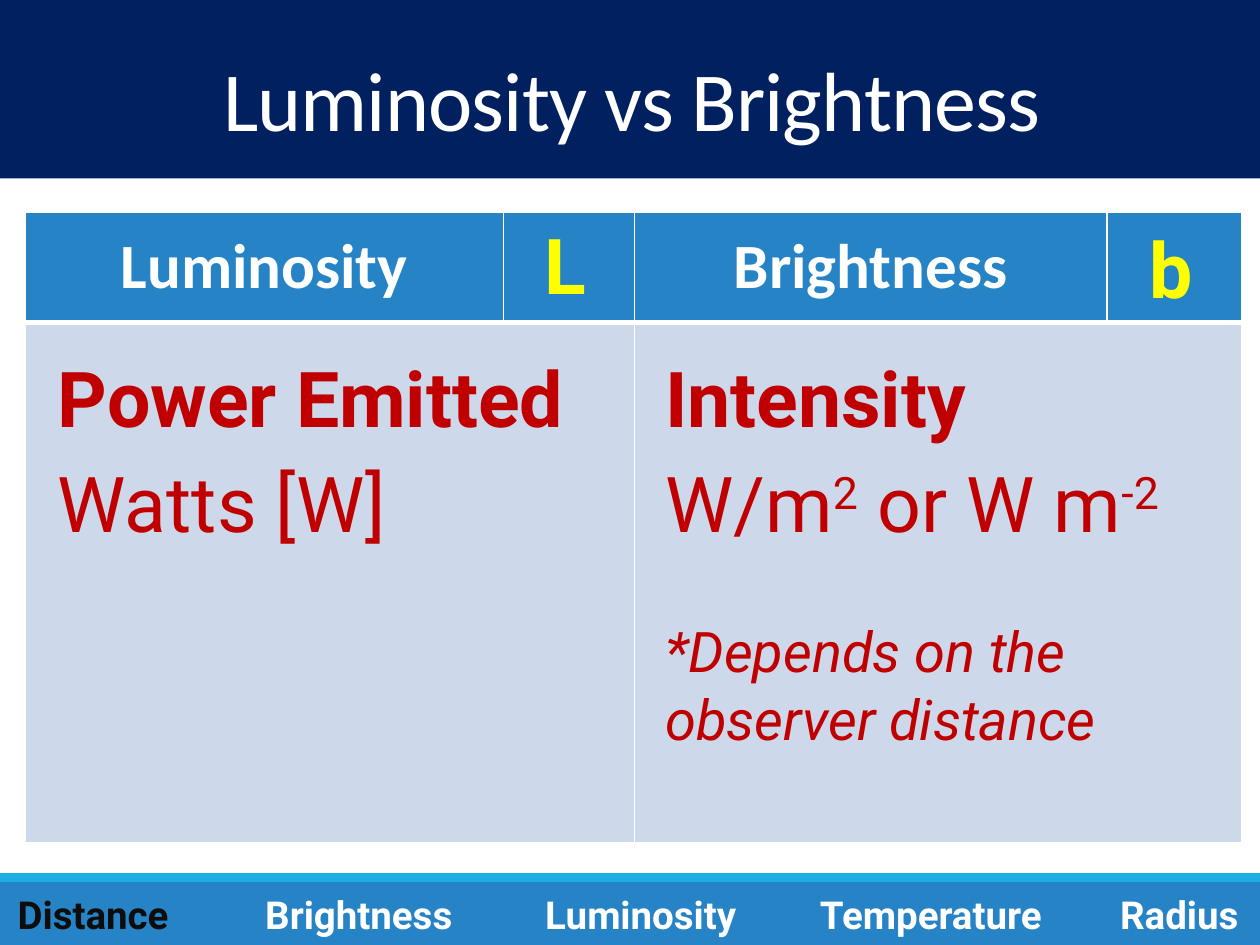
import pptx
import pptx.dml.color
import pptx.enum.shapes
import pptx.enum.text
import pptx.oxml
import pptx.oxml.ns
import pptx.util

Pt = pptx.util.Pt
RGBColor = pptx.dml.color.RGBColor
Align = pptx.enum.text.PP_ALIGN
Anchor = pptx.enum.text.MSO_ANCHOR
AutoSize = pptx.enum.text.MSO_AUTO_SIZE

WHITE = RGBColor(0xFF, 0xFF, 0xFF)
NAVY = RGBColor(0x00, 0x20, 0x60)
BLUE = RGBColor(0x26, 0x83, 0xC6)
SKY = RGBColor(0x1C, 0xAD, 0xE4)
PALE = RGBColor(0xCD, 0xD9, 0xEA)
RED = RGBColor(0xC0, 0x00, 0x00)
YELLOW = RGBColor(0xFF, 0xFF, 0x00)
BLACK = RGBColor(0x0D, 0x0D, 0x0D)


def add_run(paragraph, text, size=44, color=RED, font="Roboto", bold=False,
            italic=False, **attributes):
    """Add a run; extra keywords become run attributes such as spc or baseline."""
    run = paragraph.add_run()
    run.text = text
    run.font.size = Pt(size)
    run.font.name = font
    run.font.color.rgb = color
    run.font.bold = bold
    run.font.italic = italic
    for name, value in attributes.items():
        run.font._element.set(name, str(value))


def set_borders(cell, bottom=1):
    """Give a cell white borders, with widths in points."""
    properties = cell._tc.get_or_add_tcPr()
    for side, width in (("L", 1), ("R", 1), ("T", 1), ("B", bottom)):
        properties.append(pptx.oxml.parse_xml(
            f'<a:ln{side} {pptx.oxml.ns.nsdecls("a")} w="{Pt(width)}">'
            f'<a:solidFill><a:srgbClr val="{WHITE}"/></a:solidFill></a:ln{side}>'))


class SlideBuilder:
    def __init__(self, slide, heading_font="Calibri"):
        self.slide = slide
        self.heading_font = heading_font

    def band(self, top, height, color):
        shape = self.slide.shapes.add_shape(
            pptx.enum.shapes.MSO_SHAPE.RECTANGLE, 0, Pt(top), Pt(720), Pt(height))
        shape.shadow.inherit = False
        shape.fill.solid()
        shape.fill.fore_color.rgb = color
        shape.line.fill.background()

    def text_box(self, left, top, width, height, *pieces, align=Align.LEFT,
                 wrap=False, **style):
        """Add one paragraph; a piece is a text or a (text, baseline) pair."""
        shape = self.slide.shapes.add_textbox(Pt(left), Pt(top), Pt(width), Pt(height))
        frame = shape.text_frame
        frame.word_wrap = wrap
        frame.auto_size = AutoSize.SHAPE_TO_FIT_TEXT
        paragraph = frame.paragraphs[0]
        paragraph.alignment = align
        for piece in pieces:
            if isinstance(piece, tuple):
                add_run(paragraph, piece[0], baseline=piece[1], **style)
            else:
                add_run(paragraph, piece, **style)
        return frame

    def title(self, text):
        frame = self.text_box(2, 30, 718, 60.5, text, align=Align.CENTER, wrap=True,
                              size=48, color=WHITE, font=self.heading_font, spc=-50)
        frame.auto_size = AutoSize.NONE
        frame.vertical_anchor = Anchor.MIDDLE
        frame.paragraphs[0].line_spacing = 0.85

    def comparison_table(self, left, top, widths, heights, headings):
        """Each heading takes a wide and a narrow column, joined in the body row."""
        table = self.slide.shapes.add_table(
            len(heights), len(widths), Pt(left), Pt(top),
            Pt(sum(widths)), Pt(sum(heights))).table
        table.horz_banding = False
        for column, width in zip(table.columns, widths):
            column.width = Pt(width)
        for row, height in zip(table.rows, heights):
            row.height = Pt(height)
        for index, row in enumerate(table.rows):
            for cell in row.cells:
                set_borders(cell, bottom=1 if index else 3)
                cell.fill.solid()
                cell.fill.fore_color.rgb = PALE if index else BLUE
        for index, heading in enumerate(headings):
            column = 2 * index
            cell = table.cell(0, column)
            cell.vertical_anchor = Anchor.MIDDLE
            paragraph = cell.text_frame.paragraphs[0]
            paragraph.alignment = Align.CENTER
            add_run(paragraph, heading, size=36, color=WHITE,
                    font=self.heading_font, bold=True)
            table.cell(1, column).merge(table.cell(1, column + 1))


def main():
    presentation = pptx.Presentation()
    presentation.slide_width = Pt(720)
    presentation.slide_height = Pt(540)
    builder = SlideBuilder(presentation.slides.add_slide(presentation.slide_layouts[6]))

    builder.band(504, 36, BLUE)
    builder.band(499, 5, SKY)
    builder.band(0, 102, NAVY)
    builder.title("Luminosity vs Brightness")
    builder.comparison_table(14.6, 121, (273, 75, 270, 77), (63.4, 297.4),
                             ("Luminosity", "Brightness"))

    left, right = 26, 373
    name_top, unit_top, line_height = 196.5, 257, 60.5
    builder.text_box(right, name_top, 197, line_height, "Intensity", bold=True)
    builder.text_box(right, unit_top, 313, line_height,
                     "W/m", ("2", 30000), " or W m", ("-2", 30000))
    builder.text_box(right, 349, 301, 85, "*Depends on the observer distance",
                     wrap=True, size=32, italic=True)
    builder.text_box(left, name_top, 321, line_height, "Power Emitted", bold=True)
    builder.text_box(left, unit_top, 208, line_height, "Watts [W]")

    for symbol, symbol_left, top, width in (("L", 304, 121, 37.5), ("b", 648, 123, 42)):
        builder.text_box(symbol_left, top, width, line_height, symbol,
                         align=Align.CENTER, color=YELLOW, bold=True)

    topics = (("Distance", 3, 104, BLACK), ("Brightness", 144.5, 124.5, WHITE),
              ("Luminosity", 304.5, 129.5, WHITE), ("Temperature", 461.5, 149, WHITE),
              ("Radius", 633, 84, WHITE))
    for topic, topic_left, width, color in topics:
        builder.text_box(topic_left, 505.5, width, 34, topic,
                         size=22, color=color, bold=True)

    presentation.save("out.pptx")


if __name__ == "__main__":
    main()
